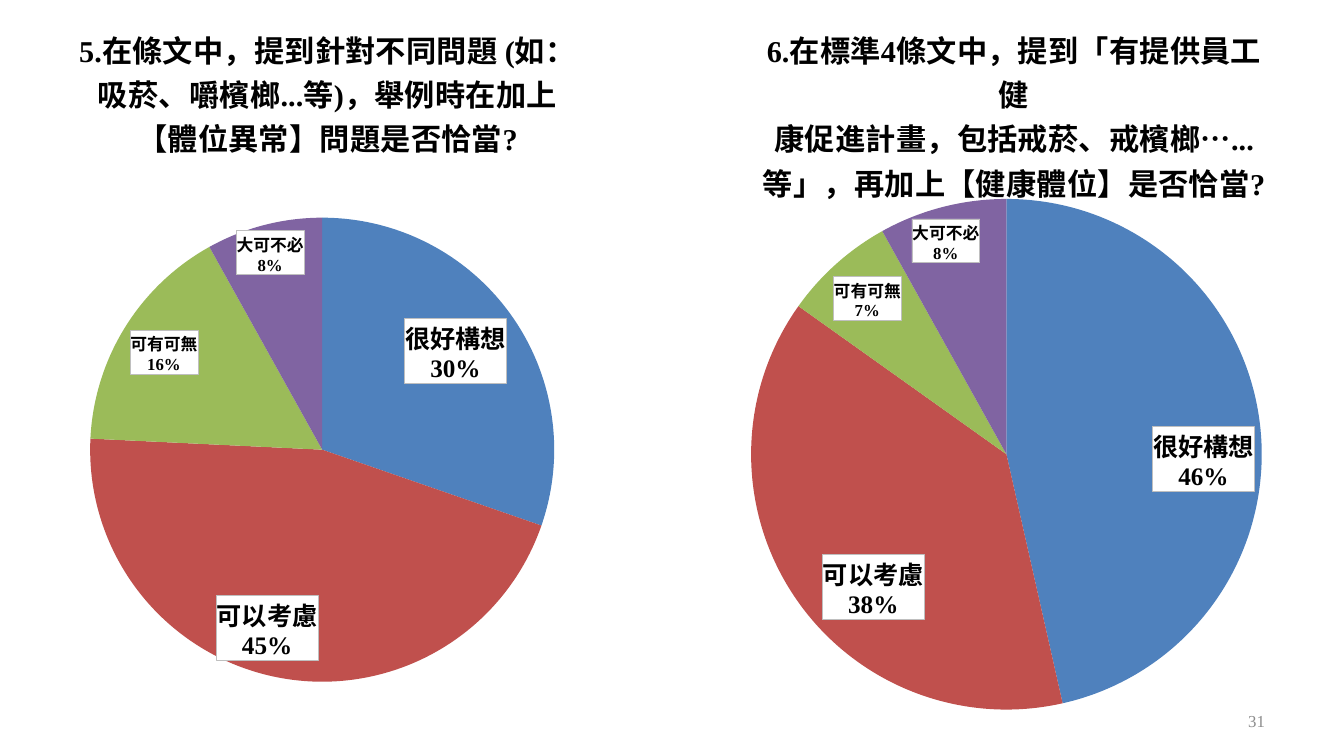
import pptx
import pptx.chart.data
import pptx.dml.color
import pptx.enum.chart
import pptx.enum.text
import pptx.oxml
import pptx.oxml.ns
import pptx.util

RGB = pptx.dml.color.RGBColor
BLACK = RGB(0, 0, 0)
WHITE = RGB(255, 255, 255)
EDGE = RGB(0xBF, 0xBF, 0xBF)
GRAY = RGB(0x8C, 0x8C, 0x8C)
FILLS = [RGB(0x4F, 0x81, 0xBD), RGB(0xC0, 0x50, 0x4D),
         RGB(0x9B, 0xBB, 0x59), RGB(0x80, 0x64, 0xA2)]
FACE = "Times New Roman"
NAMES = ["很好構想", "可以考慮", "可有可無", "大可不必"]
SIZES = [18, 18, 12, 12]
WIDE, HIGH = 1344, 756
SCALE = 914400 / 100.8


def px(num):
    return pptx.util.Emu(round(num * SCALE))


def style(font, size, color, bold):
    font.name = FACE
    font.size = pptx.util.Pt(size)
    font.bold = bold
    font.color.rgb = color


def layout(left, top, size=None):
    inner = '<c:layoutTarget val="inner"/>' if size else ""
    mode = '<c:xMode val="edge"/><c:yMode val="edge"/>'
    area = f'<c:w val="{size[0]:.3f}"/><c:h val="{size[1]:.3f}"/>' if size else ""
    return (f'<c:layout {pptx.oxml.ns.nsdecls("c")}><c:manualLayout>{inner}{mode}'
            f'<c:x val="{left:.3f}"/><c:y val="{top:.3f}"/>{area}'
            '</c:manualLayout></c:layout>')


def shift(across, down):
    if not across and not down:
        return ""
    return (f'<c:layout><c:manualLayout><c:x val="{across:.3f}"/>'
            f'<c:y val="{down:.3f}"/></c:manualLayout></c:layout>')


def label(index, size, move):
    return f'''<c:dLbl><c:idx val="{index}"/>{move}
<c:numFmt formatCode="0%" sourceLinked="0"/>
<c:spPr><a:solidFill><a:srgbClr val="{WHITE}"/></a:solidFill>
<a:ln w="6350"><a:solidFill><a:srgbClr val="{EDGE}"/></a:solidFill></a:ln></c:spPr>
<c:txPr><a:bodyPr/><a:lstStyle/><a:p><a:pPr><a:defRPr sz="{size * 100}" b="1">
<a:solidFill><a:srgbClr val="{BLACK}"/></a:solidFill>
<a:latin typeface="{FACE}"/></a:defRPr></a:pPr><a:endParaRPr lang="zh-TW"/></a:p></c:txPr>
<c:dLblPos val="inEnd"/><c:showLegendKey val="0"/><c:showVal val="0"/>
<c:showCatName val="1"/><c:showSerName val="0"/><c:showPercent val="1"/>
<c:showBubbleSize val="0"/><c:separator>\n</c:separator></c:dLbl>'''


def tags(series, moves, width, height):
    body = "".join(
        label(index, size, shift(across / width, down / height))
        for index, (size, (across, down)) in enumerate(zip(SIZES, moves)))
    xml = f'''<c:dLbls {pptx.oxml.ns.nsdecls("c", "a")}>{body}
<c:numFmt formatCode="0%" sourceLinked="0"/><c:dLblPos val="inEnd"/>
<c:showLegendKey val="0"/><c:showVal val="0"/><c:showCatName val="1"/>
<c:showSerName val="0"/><c:showPercent val="1"/><c:showBubbleSize val="0"/>
<c:separator>\n</c:separator><c:showLeaderLines val="0"/></c:dLbls>'''
    cat = series._element.find(pptx.oxml.ns.qn("c:cat"))
    cat.addprevious(pptx.oxml.parse_xml(xml))


def place(node, xml):
    for old in node.findall(pptx.oxml.ns.qn("c:layout")):
        node.remove(old)
    node.insert(0, pptx.oxml.parse_xml(xml))


def heading(chart, lines, left, top):
    chart.has_title = True
    title = chart.chart_title
    title.include_in_layout = False
    frame = title.text_frame
    for index, line in enumerate(lines):
        para = frame.add_paragraph() if index else frame.paragraphs[0]
        para.add_run().text = line
        para.alignment = pptx.enum.text.PP_ALIGN.CENTER
        style(para.font, 21.6, BLACK, True)
    node = title._element
    for old in node.findall(pptx.oxml.ns.qn("c:layout")):
        node.remove(old)
    node.find(pptx.oxml.ns.qn("c:tx")).addnext(
        pptx.oxml.parse_xml(layout(left, top)))


def pie(slide, box, lines, start, area, values, moves):
    left, top, width, height = box
    data = pptx.chart.data.CategoryChartData()
    data.categories = NAMES
    data.add_series("Series 1", values)
    chart = slide.shapes.add_chart(
        pptx.enum.chart.XL_CHART_TYPE.PIE, *map(px, box), data).chart
    chart.has_legend = False
    style(chart.font, 10, BLACK, False)
    heading(chart, lines, start[0] / width, start[1] / height)
    plot = chart.plots[0]
    plot.vary_by_categories = True
    series = plot.series[0]
    for index, color in enumerate(FILLS):
        part = series.points[index].format
        part.fill.solid()
        part.fill.fore_color.rgb = color
        part.line.fill.background()
    tags(series, moves, width, height)
    across, down, wide, high = area
    node = chart._chartSpace.chart.plotArea
    place(node, layout(across / width, down / height,
                       (wide / width, high / height)))


def number(slide, box, text):
    frame = slide.shapes.add_textbox(*map(px, box)).text_frame
    frame.word_wrap = True
    frame.vertical_anchor = pptx.enum.text.MSO_ANCHOR.MIDDLE
    frame.margin_left = frame.margin_right = px(12)
    frame.margin_top = frame.margin_bottom = px(6)
    para = frame.paragraphs[0]
    para.text = text
    para.alignment = pptx.enum.text.PP_ALIGN.RIGHT
    style(para.font, 12, GRAY, False)


def main():
    deck = pptx.Presentation()
    deck.slide_width, deck.slide_height = px(WIDE), px(HIGH)
    slide = deck.slides.add_slide(deck.slide_layouts[6])
    number(slide, (964, 701, 313, 40), "31")
    pie(slide, (0, 0, 663, HIGH),
        ["5.在條文中，提到針對不同問題 (如：",
         "吸菸、嚼檳榔...等)，舉例時在加上",
         "【體位異常】問題是否恰當?"],
        (76, 22), (90, 207, 464, 485), [30, 45, 16, 8],
        [(0, 0), (-63, -11), (0, 0), (-29, 0)])
    pie(slide, (660, 0, 680, HIGH),
        ["6.在標準4條文中，提到「有提供員工", "健",
         "康促進計畫，包括戒菸、戒檳榔…...",
         "等」，再加上【健康體位】是否恰當?"],
        (100, 22), (91, 185, 511, 538), [46, 38, 7, 8],
        [(0, 0), (24, 27), (-7, 8), (-32, 6)])
    deck.save("out.pptx")


if __name__ == "__main__":
    main()
